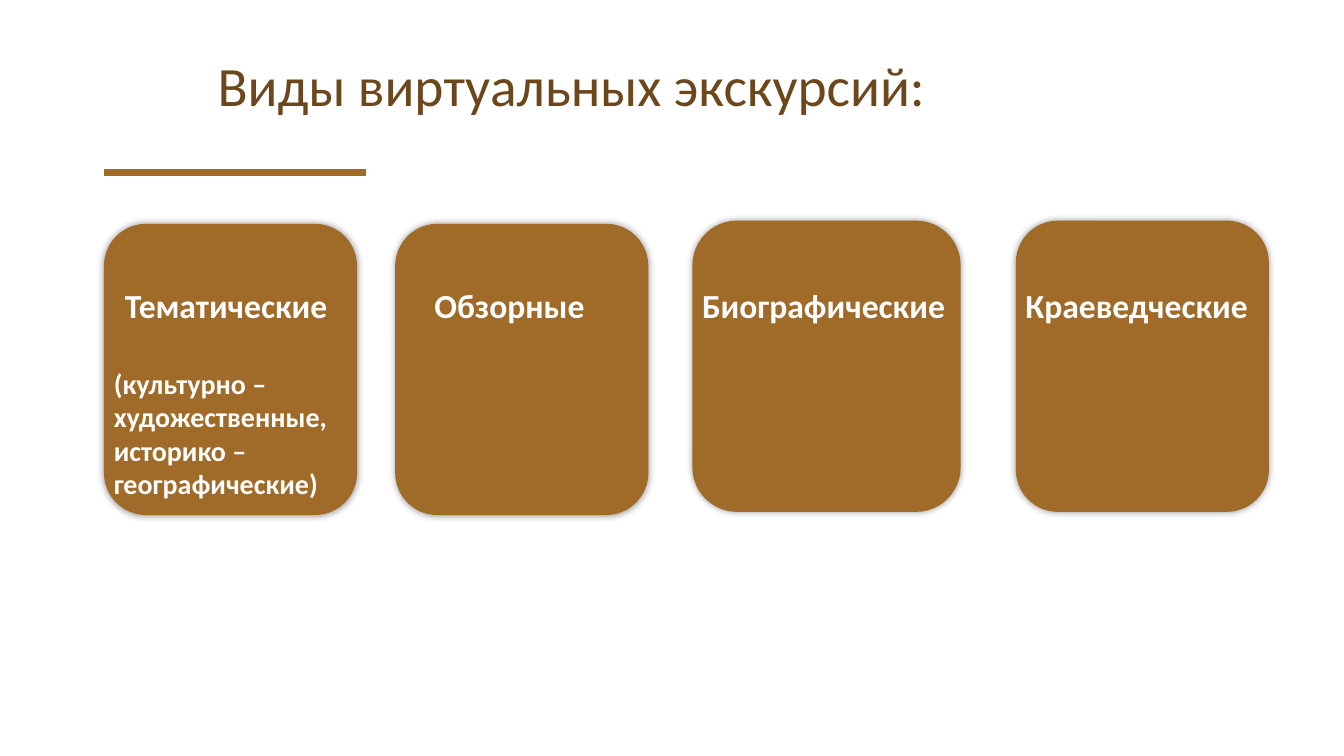
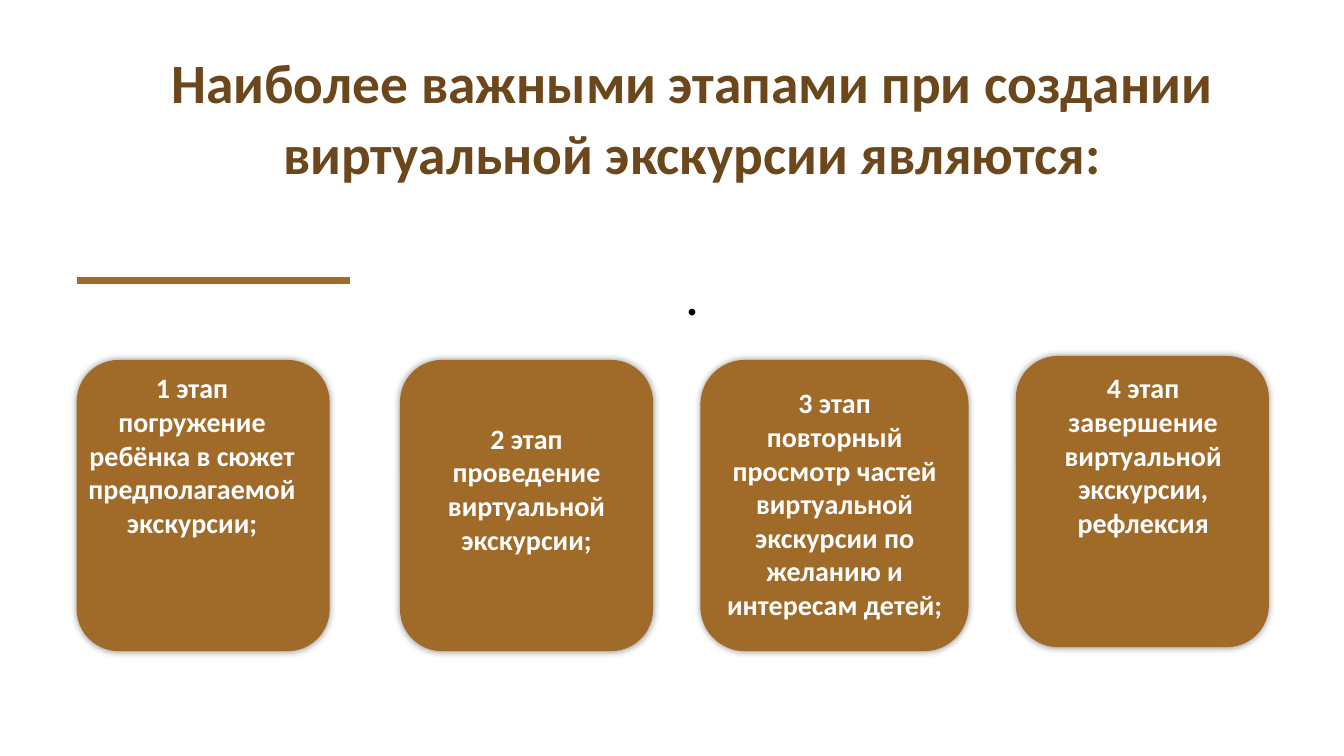
"""Builds two slides on the kinds and stages of virtual excursions."""
from dataclasses import dataclass

import lxml.etree
import pptx
import pptx.dml.color
import pptx.enum.shapes
import pptx.enum.text
import pptx.oxml.ns
import pptx.shapes.connector
import pptx.slide
import pptx.text.text
import pptx.util

Cm = pptx.util.Cm
Pt = pptx.util.Pt
RGB = pptx.dml.color.RGBColor
Align = pptx.enum.text.PP_ALIGN
qn = pptx.oxml.ns.qn

OCHRE = RGB(0xA0, 0x6A, 0x29)
BROWN = RGB(0x6B, 0x47, 0x1B)
WHITE = RGB(0xFF, 0xFF, 0xFF)
BLACK = RGB(0x00, 0x00, 0x00)
FONT = "Calibri"
HEAD = 39.6
TALL = 7.34
WIDE = 6.38


@dataclass(frozen=True)
class Line:
    text: str
    size: float = 20
    align: Align = Align.CENTER
    before: float = 0


@dataclass(frozen=True)
class Label:
    left: float
    top: float
    width: float
    lines: tuple[Line, ...]


@dataclass(frozen=True)
class Card:
    left: float
    top: float
    label: Label
    width: float = WIDE


@dataclass(frozen=True)
class Title:
    text: str
    left: float
    top: float
    width: float
    bold: bool
    align: Align


@dataclass(frozen=True)
class Rule:
    left: float
    right: float
    top: float


@dataclass(frozen=True)
class Page:
    title: Title
    rule: Rule
    cards: tuple[Card, ...]
    mark: Label | None = None


def kind(name: str) -> tuple[Line, ...]:
    return (Line(name, size=24),)


def stage(number: int, text: str) -> tuple[Line, ...]:
    return (Line(f"{number} этап"), Line(text))


KINDS = Page(
    Title("Виды виртуальных экскурсий:", 5.23, 0.23, 26, False, Align.LEFT),
    Rule(2.62, 9.22, 4.34),
    (
        Card(2.62, 5.64, Label(2.62, 7.06, 6.16, kind("Тематические") + (
            Line("(культурно – художественные,", align=Align.LEFT, before=29),
            Line("историко – географические)", align=Align.LEFT),
        ))),
        Card(9.96, 5.64, Label(9.65, 7.06, WIDE, kind("Обзорные"))),
        Card(17.45, 5.56, Label(17.3, 7.06, 6.91, kind("Биографические")), 6.76),
        Card(25.6, 5.56, Label(25.32, 7.06, 6.65, kind("Краеведческие"))),
    ),
)

STAGES = Page(
    Title("Наиболее важными этапами при создании виртуальной экскурсии являются:",
          2.84, 1.04, 29.21, True, Align.CENTER),
    Rule(1.93, 8.81, 7.06),
    (
        Card(1.93, 9.07, Label(1.93, 9.22, 5.82, stage(
            1, "погружение ребёнка в сюжет предполагаемой экскурсии;"))),
        Card(10.08, 9.07, Label(10.08, 10.49, WIDE, stage(
            2, "проведение виртуальной экскурсии;"))),
        Card(17.65, 9.07, Label(17.97, 9.6, 6.13, stage(
            3, "повторный просмотр частей виртуальной экскурсии "
               "по желанию и интересам детей;")), 6.76),
        Card(25.6, 8.97, Label(25.98, 9.22, 5.66, stage(
            4, "завершение виртуальной экскурсии, рефлексия"))),
    ),
    Label(2.84, 6.43, 29.21, (Line(".", size=HEAD),)),
)


def write(para: pptx.text.text._Paragraph, text: str, *, size: float,
          color: RGB, bold: bool, align: Align, before: float = 0) -> None:
    run = para.add_run()
    run.text = text
    run.font.name = FONT
    run.font.size = Pt(size)
    run.font.bold = bold
    run.font.color.rgb = color
    para.alignment = align
    if before:
        para.space_before = Pt(before)


def put_title(slide: pptx.slide.Slide, title: Title) -> None:
    shape = slide.shapes.title
    shape.left, shape.top = Cm(title.left), Cm(title.top)
    shape.width, shape.height = Cm(title.width), Cm(3.68)
    frame = shape.text_frame
    frame.word_wrap = True
    frame.auto_size = pptx.enum.text.MSO_AUTO_SIZE.NONE
    frame.vertical_anchor = pptx.enum.text.MSO_ANCHOR.MIDDLE
    para = frame.paragraphs[0]
    para.line_spacing = 1.07
    write(para, title.text, size=HEAD, color=BROWN, bold=title.bold, align=title.align)


def put_rule(slide: pptx.slide.Slide, rule: Rule) -> None:
    line = slide.shapes.add_connector(
        pptx.enum.shapes.MSO_CONNECTOR.STRAIGHT,
        Cm(rule.left), Cm(rule.top), Cm(rule.right), Cm(rule.top))
    line.line.color.rgb = OCHRE
    line.line.width = Pt(5)
    lxml.etree.SubElement(line._element.spPr, qn("a:effectLst"))


def put_label(slide: pptx.slide.Slide, label: Label, color: RGB, bold: bool) -> None:
    tall = sum(Pt(line.size * 1.25) for line in label.lines) + Cm(0.25)
    box = slide.shapes.add_textbox(
        Cm(label.left), Cm(label.top), Cm(label.width), tall)
    frame = box.text_frame
    frame.word_wrap = True
    for index, line in enumerate(label.lines):
        para = frame.add_paragraph() if index else frame.paragraphs[0]
        write(para, line.text, size=line.size, color=color, bold=bold,
              align=line.align, before=line.before)


def put_card(slide: pptx.slide.Slide, card: Card) -> None:
    shape = slide.shapes.add_shape(
        pptx.enum.shapes.MSO_SHAPE.ROUNDED_RECTANGLE,
        Cm(card.left), Cm(card.top), Cm(card.width), Cm(TALL))
    shape.fill.solid()
    shape.fill.fore_color.rgb = OCHRE
    shape.line.fill.background()
    shape.shadow.inherit = False
    effects = shape._element.spPr.find(qn("a:effectLst"))
    glow = lxml.etree.SubElement(
        effects, qn("a:outerShdw"), blurRad=str(Pt(5)), dist="0", dir="0",
        algn="ctr", rotWithShape="0")
    tint = lxml.etree.SubElement(glow, qn("a:srgbClr"), val=str(BLACK))
    lxml.etree.SubElement(tint, qn("a:alpha"), val="40000")
    put_label(slide, card.label, WHITE, True)


def draw(deck: pptx.presentation.Presentation, page: Page) -> None:
    slide = deck.slides.add_slide(deck.slide_layouts.get_by_name("Title Only"))
    put_title(slide, page.title)
    put_rule(slide, page.rule)
    if page.mark:
        put_label(slide, page.mark, BLACK, False)
    for card in page.cards:
        put_card(slide, card)


def main() -> None:
    deck = pptx.Presentation()
    deck.slide_width, deck.slide_height = Cm(33.87), Cm(19.05)
    for page in (KINDS, STAGES):
        draw(deck, page)
    deck.save("out.pptx")


if __name__ == "__main__":
    main()
